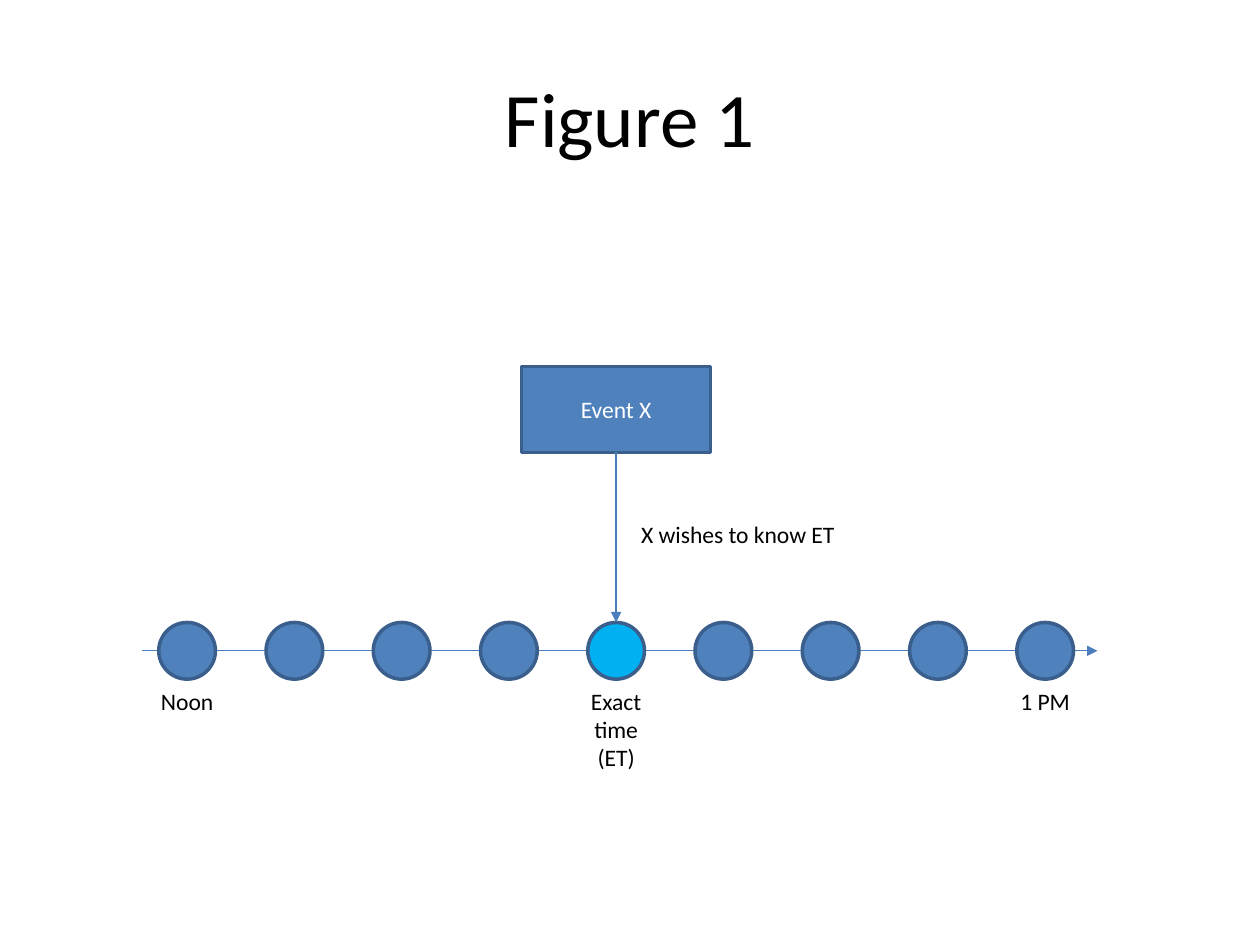
from dataclasses import dataclass

from lxml import etree
from pptx import Presentation
from pptx.dml.color import RGBColor
from pptx.enum import shapes, text
from pptx.oxml import ns
from pptx.util import Inches, Pt


@dataclass(frozen=True)
class Theme:
    font: str = "Calibri"
    title_size: float = 44
    label_size: float = 13.5
    outline_width: float = 2
    arrow_width: float = 0.75
    black: RGBColor = RGBColor(0x00, 0x00, 0x00)
    white: RGBColor = RGBColor(0xFF, 0xFF, 0xFF)
    fill: RGBColor = RGBColor(0x4F, 0x81, 0xBD)
    highlight: RGBColor = RGBColor(0x00, 0xB0, 0xF0)
    outline: RGBColor = RGBColor(0x3A, 0x5F, 0x8C)
    arrow: RGBColor = RGBColor(0x4B, 0x7E, 0xBC)


THEME = Theme()

TICK_COUNT = 9
EXACT_TICK = 4
TICK_SIZE = 0.45
TICK_TOP = 4.94
FIRST_TICK_LEFT = 1.26
LAST_TICK_LEFT = 8.07
TICK_PITCH = (LAST_TICK_LEFT - FIRST_TICK_LEFT) / (TICK_COUNT - 1)
TICK_LABEL_WIDTH = 0.93
TICK_LABELS = {
    0: (["Noon"], 0.33),
    EXACT_TICK: (["Exact time", "(ET)"], 0.78),
    TICK_COUNT - 1: (["1 PM"], 0.33),
}


def write_lines(frame, lines, size, color, align):
    for index, line in enumerate(lines):
        paragraph = frame.paragraphs[0] if index == 0 else frame.add_paragraph()
        paragraph.alignment = align
        run = paragraph.add_run()
        run.text = line
        run.font.name = THEME.font
        run.font.size = Pt(size)
        run.font.color.rgb = color


def add_title(slide, title):
    shape = slide.shapes.title
    shape.left, shape.top = Inches(0.5), Inches(0.3)
    shape.width, shape.height = Inches(9), Inches(1.25)
    shape.text_frame.vertical_anchor = text.MSO_ANCHOR.MIDDLE
    write_lines(shape.text_frame, [title], THEME.title_size, THEME.black,
                text.PP_ALIGN.CENTER)


def add_outlined_shape(slide, kind, left, top, width, height, fill):
    shape = slide.shapes.add_shape(
        kind, Inches(left), Inches(top), Inches(width), Inches(height))
    shape.shadow.inherit = False
    shape.fill.solid()
    shape.fill.fore_color.rgb = fill
    shape.line.color.rgb = THEME.outline
    shape.line.width = Pt(THEME.outline_width)
    return shape


def add_arrow(slide, start, end):
    arrow = slide.shapes.add_connector(
        shapes.MSO_CONNECTOR.STRAIGHT, *map(Inches, start + end))
    arrow.line.color.rgb = THEME.arrow
    arrow.line.width = Pt(THEME.arrow_width)
    line = arrow.line._get_or_add_ln()
    etree.SubElement(line, ns.qn("a:tailEnd"), type="triangle")
    etree.SubElement(arrow._element.spPr, ns.qn("a:effectLst"))
    return arrow


def add_label(slide, lines, left, top, width, height,
              align=text.PP_ALIGN.CENTER, wrap=True):
    box = slide.shapes.add_textbox(
        Inches(left), Inches(top), Inches(width), Inches(height))
    box.text_frame.word_wrap = wrap
    box.text_frame.auto_size = text.MSO_AUTO_SIZE.SHAPE_TO_FIT_TEXT
    write_lines(box.text_frame, lines, THEME.label_size, THEME.black, align)


def add_timeline(slide):
    """Draw the time axis with its ticks and labels; return the exact-time tick."""
    axis_y = TICK_TOP + TICK_SIZE / 2
    add_arrow(slide, (1.13, axis_y), (8.71, axis_y))
    ticks = []
    for index in range(TICK_COUNT):
        left = FIRST_TICK_LEFT + index * TICK_PITCH
        fill = THEME.highlight if index == EXACT_TICK else THEME.fill
        ticks.append(add_outlined_shape(
            slide, shapes.MSO_SHAPE.OVAL, left, TICK_TOP,
            TICK_SIZE, TICK_SIZE, fill))
        if index in TICK_LABELS:
            lines, height = TICK_LABELS[index]
            label_left = left + (TICK_SIZE - TICK_LABEL_WIDTH) / 2
            add_label(slide, lines, label_left, 5.4, TICK_LABEL_WIDTH, height)
    return ticks[EXACT_TICK]


def add_event(slide, exact_tick):
    event = add_outlined_shape(
        slide, shapes.MSO_SHAPE.RECTANGLE, 4.14, 2.91, 1.5, 0.68, THEME.fill)
    event.text_frame.vertical_anchor = text.MSO_ANCHOR.MIDDLE
    write_lines(event.text_frame, ["Event X"], THEME.label_size, THEME.white,
                text.PP_ALIGN.CENTER)
    query = add_arrow(slide, (4.88, 3.59), (4.88, TICK_TOP))
    query.begin_connect(event, 2)
    query.end_connect(exact_tick, 0)
    add_label(slide, ["X wishes to know ET"], 4.99, 4.08, 1.76, 0.33,
              align=text.PP_ALIGN.LEFT, wrap=False)


def main():
    presentation = Presentation()
    presentation.slide_width = Inches(10)
    presentation.slide_height = Inches(7.5)
    title_only = presentation.slide_layouts[5]
    slide = presentation.slides.add_slide(title_only)
    add_title(slide, "Figure 1")
    exact_tick = add_timeline(slide)
    add_event(slide, exact_tick)
    presentation.save("out.pptx")


if __name__ == "__main__":
    main()
